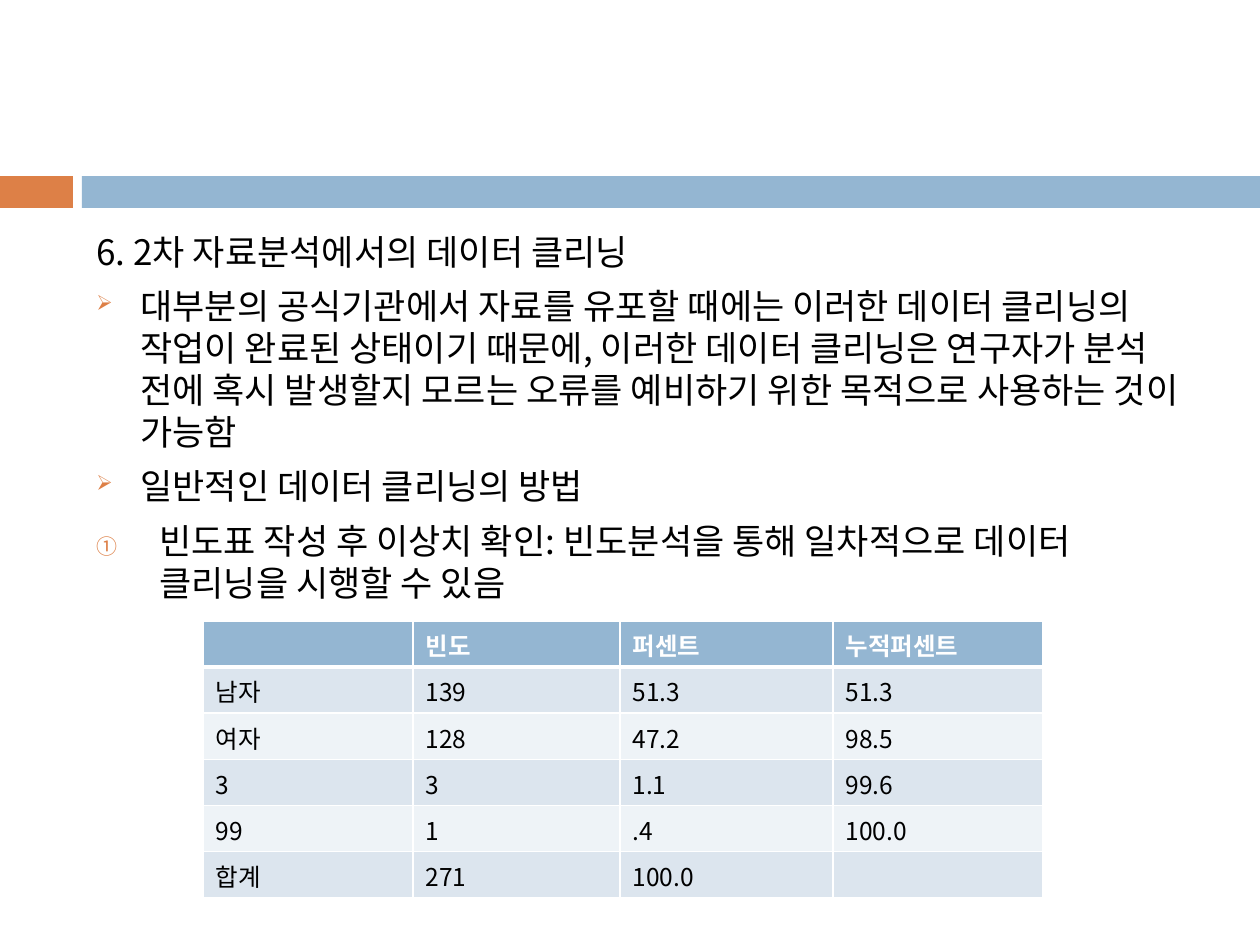
from lxml import etree
from pptx import Presentation
from pptx.dml.color import RGBColor
from pptx.enum.shapes import MSO_SHAPE
from pptx.oxml.ns import qn
from pptx.util import Pt

RECT = MSO_SHAPE.RECTANGLE
PX = 914400 // 126  # EMU in one px
THEME = {
    "font": "Noto Sans CJK KR", "body": 20, "cell": 14, "lead": 24, "gap": 7,
    "text": "000000", "white": "FFFFFF", "accent": "DD8047", "blue": "94B6D2",
    "bands": ("DCE5EE", "EEF3F7"),
}


def style(par, size, color, bold=False):
    """Format every run of a paragraph, Hangul included."""
    for run in par.runs:
        font = run.font
        font.name = THEME["font"]
        font.size = Pt(size)
        font.bold = bold
        font.color.rgb = RGBColor.from_string(color)
        east = etree.SubElement(run._r.get_or_add_rPr(), qn("a:ea"))
        east.set("typeface", THEME["font"])


def add_color(parent, color):
    etree.SubElement(parent, qn("a:srgbClr")).set("val", color)


prs = Presentation()
prs.slide_width = 1260 * PX
prs.slide_height = 945 * PX
slide = prs.slides.add_slide(prs.slide_layouts[6])

# Band under the empty title area
for left, width, color in ((0, 73, THEME["accent"]), (82, 1178, THEME["blue"])):
    bar = slide.shapes.add_shape(RECT, left * PX, 176 * PX, width * PX, 32 * PX)
    bar.shadow.inherit = False
    bar.fill.solid()
    bar.fill.fore_color.rgb = RGBColor.from_string(color)
    bar.line.fill.background()

# Body: text, hanging indent in px, bullet tag with its attribute
ARROW = ("a:buChar", "char", "➢")
NUMBER = ("a:buAutoNum", "type", "circleNumDbPlain")
BODY = (
    ("6. 2차 자료분석에서의 데이터 클리닝", 0, None),
    ("대부분의 공식기관에서 자료를 유포할 때에는 이러한 데이터 클리닝의 작업이 "
     "완료된 상태이기 때문에, 이러한 데이터 클리닝은 연구자가 분석 전에 혹시 "
     "발생할지 모르는 오류를 예비하기 위한 목적으로 사용하는 것이 가능함", 44, ARROW),
    ("일반적인 데이터 클리닝의 방법", 44, ARROW),
    ("빈도표 작성 후 이상치 확인: 빈도분석을 통해 일차적으로 데이터 클리닝을 "
     "시행할 수 있음", 63, NUMBER),
)
box = slide.shapes.add_textbox(84 * PX, 224 * PX, 1124 * PX, 620 * PX)
frame = box.text_frame
frame.word_wrap = True
for i, (text, indent, bullet) in enumerate(BODY):
    par = frame.add_paragraph() if i else frame.paragraphs[0]
    par.text = text
    par.space_before = Pt(THEME["gap"])
    par.line_spacing = Pt(THEME["lead"])
    style(par, THEME["body"], THEME["text"])
    if bullet:
        tag, key, value = bullet
        props = par._p.get_or_add_pPr()
        props.set("marL", str(indent * PX))
        props.set("indent", str(-indent * PX))
        add_color(etree.SubElement(props, qn("a:buClr")), THEME["accent"])
        etree.SubElement(props, qn("a:buSzPct")).set("val", "60000")
        etree.SubElement(props, qn(tag)).set(key, value)

# Frequency table
ROWS = (
    ("", "빈도", "퍼센트", "누적퍼센트"),
    ("남자", "139", "51.3", "51.3"),
    ("여자", "128", "47.2", "98.5"),
    ("3", "3", "1.1", "99.6"),
    ("99", "1", ".4", "100.0"),
    ("합계", "271", "100.0", ""),
)
WIDTHS = (210, 207, 213, 210)
table = slide.shapes.add_table(
    len(ROWS), len(WIDTHS), 203 * PX, 621 * PX, sum(WIDTHS) * PX, 277 * PX).table
table.first_row = table.horz_banding = False
for col, width in zip(table.columns, WIDTHS):
    col.width = width * PX
for r, row in enumerate(ROWS):
    head = r == 0
    for c, text in enumerate(row):
        cell = table.cell(r, c)
        cell.text = text
        par = cell.text_frame.paragraphs[0]
        par.font.size = Pt(THEME["cell"])
        style(par, THEME["cell"], THEME["white" if head else "text"], head)
        props = cell._tc.get_or_add_tcPr()
        for side in "LRTB":
            thick = (head and side == "B") or (r == 1 and side == "T")
            line = etree.SubElement(props, qn("a:ln" + side))
            line.set("w", str(Pt(3 if thick else 1)))
            add_color(etree.SubElement(line, qn("a:solidFill")), THEME["white"])
        cell.fill.solid()
        fill = THEME["blue"] if head else THEME["bands"][(r - 1) % 2]
        cell.fill.fore_color.rgb = RGBColor.from_string(fill)

prs.save("out.pptx")
